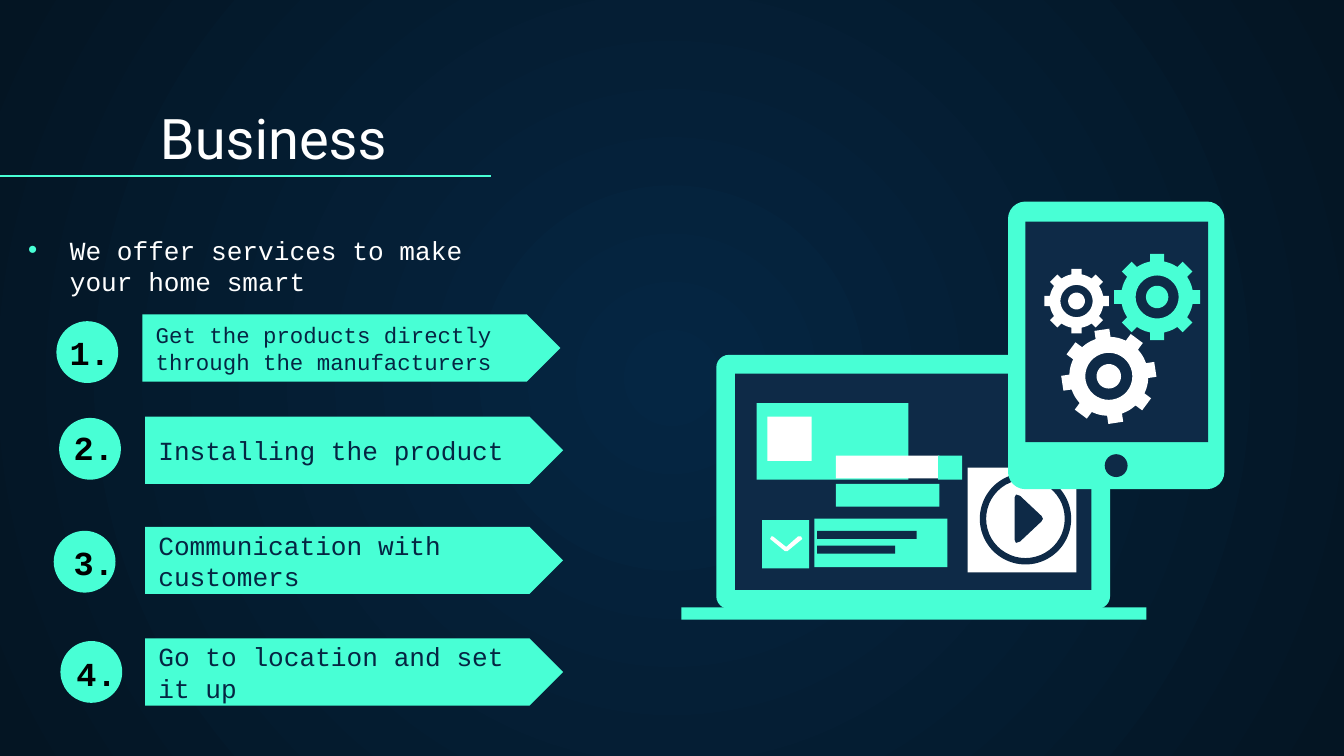
from math import cos, pi, sin

from lxml import etree
from pptx import Presentation, util as u
from pptx.dml.color import RGBColor
from pptx.enum import shapes, text
from pptx.oxml.ns import qn

COLORS = {"mint": "48FFD5", "navy": "0E2A47", "white": "FFFFFF", "black": "000000",
          "ink": "052542", "center": "052643", "edge": "041523"}
KIND = shapes.MSO_SHAPE

# Content
TITLE = "Business"
INTRO = "We offer services to make your home smart"
STEPS = [  # text, size, arrow (left, top), circle (left, top), number (left, top, width)
    ("Get the products directly through the manufacturers", 12,
     (1.06, 2.34), (0.42, 2.39), (0.42, 2.42, 0.57)),
    ("Installing the product", 14, (1.08, 3.1), (0.44, 3.11), (0.45, 3.13, 0.59)),
    ("Communication with customers", 14, (1.08, 3.92), (0.4, 3.95), (0.45, 3.98, 0.54)),
    ("Go to location and set it up", 14, (1.08, 4.75), (0.45, 4.77), (0.47, 4.81, 0.58)),
]

# Illustration: kind, (left, top, width, height), colour, adjustment
LAPTOP = [
    (KIND.ROUNDED_RECTANGLE, (5.33, 2.64, 2.93, 1.89), "mint", 0.05),
    (KIND.RECTANGLE, (5.47, 2.78, 2.65, 1.61), "navy", None),
    (KIND.RECTANGLE, (5.07, 4.52, 3.46, 0.09), "mint", None),
    (KIND.RECTANGLE, (5.63, 3, 1.13, 0.57), "mint", None),
    (KIND.RECTANGLE, (5.71, 3.1, 0.33, 0.33), "white", None),
    (KIND.RECTANGLE, (6.06, 3.86, 0.99, 0.36), "mint", None),
    (KIND.RECTANGLE, (6.08, 3.95, 0.74, 0.06), "navy", None),
    (KIND.RECTANGLE, (6.08, 4.06, 0.58, 0.06), "navy", None),
    (KIND.RECTANGLE, (5.67, 3.87, 0.35, 0.36), "mint", None),
    (KIND.RECTANGLE, (6.22, 3.6, 0.77, 0.17), "mint", None),
    (KIND.RECTANGLE, (6.22, 3.39, 0.77, 0.17), "white", None),
    (KIND.RECTANGLE, (6.98, 3.39, 0.18, 0.18), "mint", None),
    (KIND.RECTANGLE, (7.2, 3.48, 0.81, 0.78), "white", None),
    (KIND.DONUT, (7.29, 3.52, 0.68, 0.68), "navy", 0.07),
]
TABLET = [
    (KIND.ROUNDED_RECTANGLE, (7.5, 1.5, 1.61, 2.14), "mint", 0.08),
    (KIND.RECTANGLE, (7.63, 1.65, 1.36, 1.64), "navy", None),
    (KIND.OVAL, (8.22, 3.38, 0.17, 0.17), "navy", None),
]
CHECK_MARK = [(5.75, 3.99), (5.85, 4.07), (5.94, 3.99), (5.96, 3.99), (5.97, 4.01),
              (5.86, 4.1), (5.84, 4.1), (5.73, 4.01), (5.74, 3.99)]
PLAY_SIGN = [(7.55, 3.7), (7.56, 3.68), (7.59, 3.69), (7.75, 3.84), (7.76, 3.86),
             (7.75, 3.88), (7.59, 4.03), (7.56, 4.04), (7.55, 4.02)]
GEARS = [  # centre x, centre y, outer radius, turn in degrees, colour
    (8.61, 2.21, 0.32, 0, "mint"),
    (8.01, 2.24, 0.24, 0, "white"),
    (8.25, 2.8, 0.35, -8.5, "white"),
]
TEETH = 8

# Widescreen slide, 16 to 9
presentation = Presentation()
presentation.slide_width = u.Inches(10)
presentation.slide_height = u.Inches(10) * 9 // 16
slide = presentation.slides.add_slide(presentation.slide_layouts[1])


def rgb(name):
    return RGBColor.from_string(COLORS[name])


def inches(box):
    return [u.Inches(value) for value in box]


def paint(shape, color):
    shape.shadow.inherit = False
    shape.fill.solid()
    shape.fill.fore_color.rgb = rgb(color)
    shape.line.fill.background()


def add_part(kind, box, color, adjustment=None):
    shape = slide.shapes.add_shape(kind, *inches(box))
    paint(shape, color)
    if adjustment is not None:
        shape.adjustments[0] = adjustment
    return shape


def add_outline(contours, color):
    builder = None
    for contour in contours:
        start, *rest = [inches(point) for point in contour]
        if builder is None:
            builder = slide.shapes.build_freeform(*start)
        else:
            builder.move_to(*start)
        builder.add_line_segments(rest, close=True)
    paint(builder.convert_to_shape(), color)


def write(shape, content, color, size, name="Courier New", bold=False,
          anchor=text.MSO_ANCHOR.TOP, margin=None):
    frame = shape.text_frame
    frame.auto_size = text.MSO_AUTO_SIZE.NONE
    frame.word_wrap = True
    frame.vertical_anchor = anchor
    if margin is not None:
        for side in ("left", "top", "right", "bottom"):
            setattr(frame, "margin_" + side, u.Inches(margin))
    paragraph = frame.paragraphs[0]
    run = paragraph.add_run()
    run.text = content
    for key, value in {"alignment": text.PP_ALIGN.LEFT, "space_before": u.Pt(0)}.items():
        setattr(paragraph, key, value)
    for key, value in {"name": name, "size": u.Pt(size), "bold": bold}.items():
        setattr(run.font, key, value)
    run.font.color.rgb = rgb(color)
    return paragraph


def place(shape, box):
    for key, value in zip(("left", "top", "width", "height"), inches(box)):
        setattr(shape, key, value)


def gear_contours(x, y, outer, turn):
    body, half = 0.84 * outer, 0.16 * outer
    base = (body ** 2 - half ** 2) ** 0.5
    tooth = [(base, -half), (outer, -half), (outer, half), (base, half)]
    pitch = 2 * pi / TEETH
    valley = [(body * cos(pitch * part), body * sin(pitch * part)) for part in (0.4, 0.5, 0.6)]
    rim = []
    for index in range(TEETH):
        angle = turn * pi / 180 + index * pitch
        rim += [(x + a * cos(angle) - b * sin(angle), y + a * sin(angle) + b * cos(angle))
                for a, b in tooth + valley]
    rings = [[(x + radius * cos(step * pi / 18), y + radius * sin(step * pi / 18))
              for step in range(36)] for radius in (0.5 * outer, 0.26 * outer)]
    return [rim, *rings]


# Background: radial gradient
fill = slide.background.fill
fill.gradient()
for stop, color, position in zip(fill.gradient_stops, ("center", "edge"), (0, 1)):
    stop.color.rgb = rgb(color)
    stop.position = position
gradient = slide.background._cSld.find(".//" + qn("a:gradFill"))
gradient.remove(gradient.find(qn("a:lin")))
radial = etree.SubElement(gradient, qn("a:path"), {"path": "circle"})
etree.SubElement(radial, qn("a:fillToRect"), {side: "50000" for side in "ltrb"})

# Title and rule
title = slide.shapes.title
place(title, (1.09, 0.71, 8.57, 0.66))
write(title, TITLE, "white", 30, "Roboto", anchor=text.MSO_ANCHOR.BOTTOM, margin=0.1)
rule = slide.shapes.add_connector(shapes.MSO_CONNECTOR.STRAIGHT, *inches((0, 1.31, 3.65, 1.31)))
rule.line.color.rgb = rgb("mint")
rule.line.width = u.Pt(0.75)
etree.SubElement(rule._element.spPr, qn("a:effectLst"))

# Intro bullet
body = slide.placeholders[1]
place(body, (0.11, 1.69, 3.91, 2.22))
properties = write(body, INTRO, "white", 14)._p.get_or_add_pPr()
properties.set("marL", str(u.Inches(0.31)))
properties.set("indent", str(u.Inches(-0.31)))
bullet_color = etree.SubElement(properties, qn("a:buClr"))
etree.SubElement(bullet_color, qn("a:srgbClr"), {"val": COLORS["mint"]})
etree.SubElement(properties, qn("a:buFont"), {"typeface": "Arial"})
etree.SubElement(properties, qn("a:buChar"), {"char": "•"})

# Laptop, then the tablet in front of it
for part in LAPTOP:
    add_part(*part)
add_outline([CHECK_MARK], "white")
add_outline([PLAY_SIGN], "navy")
for part in TABLET:
    add_part(*part)
for *geometry, color in GEARS:
    add_outline(gear_contours(*geometry), color)

# Numbered steps
for number, (label, size, arrow_at, circle_at, number_at) in enumerate(STEPS, 1):
    add_part(KIND.OVAL, (*circle_at, 0.46, 0.46), "mint")
    arrow = add_part(KIND.PENTAGON, (*arrow_at, 3.11, 0.5), "mint", 0.5)
    write(arrow, label, "ink", size, anchor=text.MSO_ANCHOR.MIDDLE, margin=0.1)
    number_box = slide.shapes.add_textbox(*inches((*number_at, 0.4)))
    write(number_box, f"{number}.", "black", 18, bold=True)

presentation.save("out.pptx")
